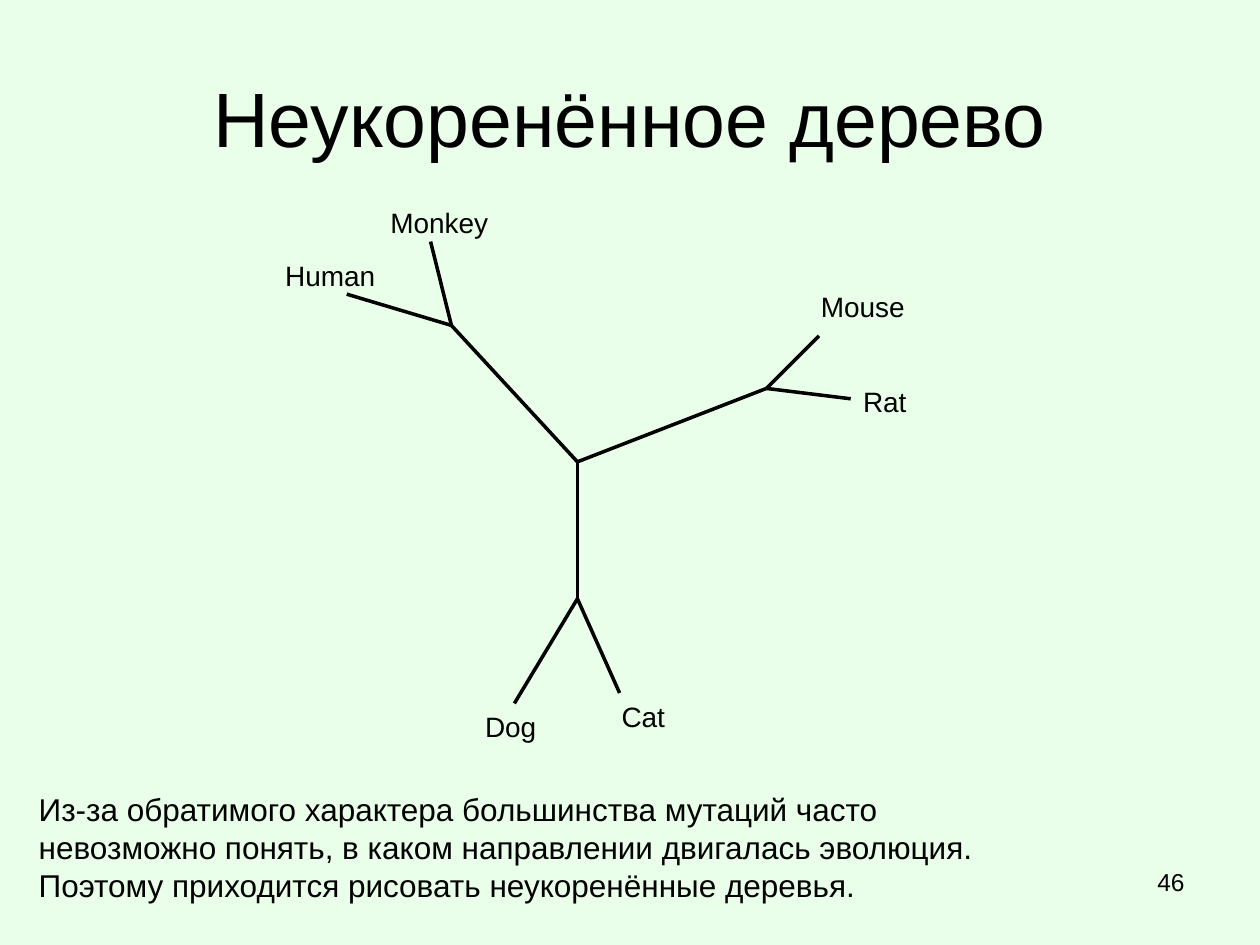
"""Build a slide with an unrooted tree of six mammals."""
from lxml.etree import SubElement
from pptx import Presentation
from pptx.dml.color import RGBColor
from pptx.enum.shapes import MSO_CONNECTOR
from pptx.enum.text import MSO_ANCHOR, PP_ALIGN
from pptx.oxml.ns import qn
from pptx.util import Cm, Pt


def color(value):
    return RGBColor.from_string(value)


def add_text(text, left, top, width, height, size, align=PP_ALIGN.LEFT, anchor=MSO_ANCHOR.TOP):
    box = page.shapes.add_textbox(Cm(left), Cm(top), Cm(width), Cm(height))
    box.text_frame.word_wrap = True
    box.text_frame.vertical_anchor = anchor
    para = box.text_frame.paragraphs[0]
    para.alignment = align
    span = para.add_run()
    span.text = text
    span.font.name = "Arial"
    span.font.size = Pt(size)
    span.font.color.rgb = color("000000")


deck = Presentation()
deck.slide_width, deck.slide_height = Cm(25.4), Cm(19.05)
page = deck.slides.add_slide(deck.slide_layouts[6])
page.background.fill.solid()
page.background.fill.fore_color.rgb = color("E9FFE9")

add_text("Неукоренённое дерево", 1.27, 0.76, 22.86, 3.18, 44, PP_ALIGN.CENTER, MSO_ANCHOR.MIDDLE)

center = (11.64, 9.31)
clades = {
    (9.1, 6.56): [(6.99, 5.93), (8.68, 4.87)],
    (15.45, 7.83): [(16.51, 6.77), (17.15, 8.04)],
    (11.64, 12.07): [(10.37, 14.18), (12.49, 13.97)],
}
branches = []
for node, tips in clades.items():
    branches.append((center, node))
    branches.extend((node, tip) for tip in tips)
for start, end in branches:
    branch = page.shapes.add_connector(
        MSO_CONNECTOR.STRAIGHT, Cm(start[0]), Cm(start[1]), Cm(end[0]), Cm(end[1])
    )
    branch.line.color.rgb = color("000000")
    branch.line.width = Pt(2)
    SubElement(branch.element.spPr, qn("a:effectLst"))

species = [
    ("Human", 5.5, 5.08, 2.4),
    ("Monkey", 7.62, 4.02, 2.54),
    ("Mouse", 16.3, 5.72, 3.18),
    ("Rat", 17.15, 7.62, 1.7),
    ("Dog", 9.53, 14.18, 1.7),
    ("Cat", 12.28, 13.97, 1.7),
]
for name, left, top, width in species:
    add_text(name, left, top, width, 0.94, 16)

add_text("46", 18.2, 17.35, 5.93, 1.32, 14, PP_ALIGN.RIGHT)
add_text(
    "Из-за обратимого характера большинства мутаций часто невозможно понять, "
    "в каком направлении двигалась эволюция. "
    "Поэтому приходится рисовать неукоренённые деревья.",
    0.53, 15.8, 20.62, 2.57, 18,
)

deck.save("out.pptx")
